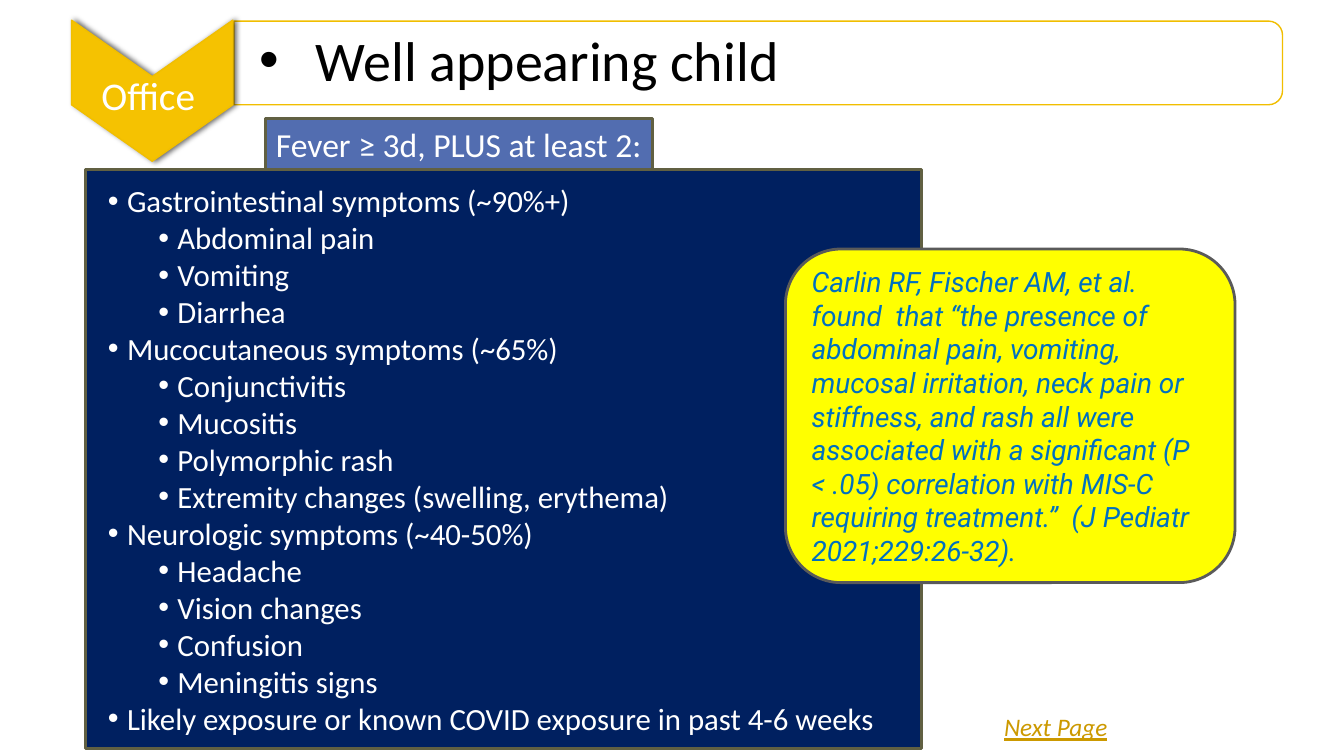
import pptx
import pptx.util
import pptx.dml.color
import pptx.enum.shapes
import pptx.enum.text
import pptx.oxml
from pptx.oxml.ns import nsdecls, qn
from lxml import etree

Inches, Pt = pptx.util.Inches, pptx.util.Pt
RGBColor = pptx.dml.color.RGBColor
SHAPE = pptx.enum.shapes.MSO_SHAPE
ANCHOR = pptx.enum.text.MSO_ANCHOR
ALIGN = pptx.enum.text.PP_ALIGN
FIT = pptx.enum.text.MSO_AUTO_SIZE

WHITE = RGBColor(0xFF, 0xFF, 0xFF)
BLACK = RGBColor(0x00, 0x00, 0x00)
NAVY = RGBColor(0x00, 0x20, 0x60)
BLUE = RGBColor(0x52, 0x6D, 0xB0)
OLIVE = RGBColor(0x61, 0x60, 0x42)
GOLD = RGBColor(0xF5, 0xC2, 0x01)
AMBER = RGBColor(0xF1, 0xBE, 0x00)
OCHRE = RGBColor(0xCC, 0x99, 0x00)
YELLOW = RGBColor(0xFF, 0xFF, 0x00)
GREY = RGBColor(0x5A, 0x5A, 0x5A)
AZURE = RGBColor(0x00, 0x70, 0xC0)

SIGNS = [
    ("Gastrointestinal symptoms (~90%+)",
     ["Abdominal pain", "Vomiting", "Diarrhea"]),
    ("Mucocutaneous symptoms (~65%)",
     ["Conjunctivitis", "Mucositis", "Polymorphic rash",
      "Extremity changes (swelling, erythema)"]),
    ("Neurologic symptoms (~40-50%)",
     ["Headache", "Vision changes", "Confusion", "Meningitis signs"]),
    ("Likely exposure or known COVID exposure in past 4-6 weeks", []),
]
QUOTE = ("Carlin RF, Fischer AM, et al. found  that “the presence of abdominal "
         "pain, vomiting, mucosal irritation, neck pain or stiffness, and rash "
         "all were associated with a significant (P < .05) correlation with "
         "MIS-C requiring treatment.”  (J Pediatr 2021;229:26-32).")


class Page:
    """Holds the base style and the slide being built."""
    base = {"name": "Calibri", "bold": False}

    def __init__(self, slide):
        self.slide = slide
        self.shapes = slide.shapes

    def apply(self, item, values):
        for key, value in values.items():
            setattr(item, key, value)

    def place(self, shape, box):
        keys = ("left", "top", "width", "height")
        self.apply(shape, dict(zip(keys, map(Inches, box))))

    def paint(self, shape, fill, line, width=2):
        shape.fill.solid()
        shape.fill.fore_color.rgb = fill
        shape.line.color.rgb = line
        shape.line.width = Pt(width)

    def frame(self, shape, **values):
        self.apply(shape.text_frame,
                   {"word_wrap": True, "auto_size": FIT.NONE, **values})

    def words(self, para, text, size, color, **font):
        run = para.add_run()
        run.text = text
        self.apply(run.font, {**self.base, "size": Pt(size), **font})
        run.font.color.rgb = color

    def bullet(self, para, left, hang):
        props = para._p.get_or_add_pPr()
        props.set("marL", str(Inches(left)))
        props.set("indent", str(-Inches(hang)))
        etree.SubElement(props, qn("a:buFont")).set("typeface", "Arial")
        etree.SubElement(props, qn("a:buChar")).set("char", "•")

    def block(self, kind, box, fill, line, width=2):
        shape = self.shapes.add_shape(kind, *map(Inches, box))
        shape.shadow.inherit = False
        self.paint(shape, fill, line, width)
        return shape

    def label(self, box, text, size, color, align=ALIGN.LEFT, **font):
        shape = self.shapes.add_textbox(*map(Inches, box))
        self.frame(shape)
        para = shape.text_frame.paragraphs[0]
        para.alignment = align
        self.words(para, text, size, color, **font)

    def card(self, kind, box, fill, line, text, size, color, align, **font):
        shape = self.block(kind, box, fill, line)
        self.frame(shape, vertical_anchor=ANCHOR.MIDDLE)
        para = shape.text_frame.paragraphs[0]
        para.alignment = align
        self.words(para, text, size, color, **font)

    def list(self, box, groups):
        body = self.slide.placeholders[1]
        self.place(body, box)
        self.paint(body, NAVY, OLIVE)
        self.frame(body, vertical_anchor=ANCHOR.MIDDLE,
                   margin_top=0, margin_bottom=0)
        rows = [(text, level) for head, subs in groups
                for text, level in [(head, 0)] + [(sub, 1) for sub in subs]]
        for n, (text, level) in enumerate(rows):
            paras = body.text_frame
            para = paras.add_paragraph() if n else paras.paragraphs[0]
            self.apply(para, {"level": level, "space_before": Pt(0),
                              "alignment": ALIGN.LEFT})
            self.bullet(para, 0.31 + 0.5 * level, 0.19)
            self.words(para, text, 22, WHITE)

    def head(self, box, text):
        left, top, width, height = box
        # Band: upright shape turned so its rounded end faces right
        turned = (left + (width - height) / 2, top + (height - width) / 2,
                  height, width)
        band = self.block(SHAPE.ROUND_2_SAME_RECTANGLE, turned, WHITE, AMBER, 1)
        band.rotation = 90
        title = self.shapes.title
        self.place(title, box)
        band.element.addnext(title.element)
        edge = Inches(0.06)
        self.frame(title, vertical_anchor=ANCHOR.MIDDLE, margin_left=Inches(0.19),
                   margin_top=edge, margin_right=edge, margin_bottom=edge)
        para = title.text_frame.paragraphs[0]
        self.apply(para, {"alignment": ALIGN.LEFT, "line_spacing": 0.9})
        self.bullet(para, 0.62, 0.56)
        self.words(para, text, 40, BLACK)

    def arrow(self, box, notch):
        left, top, width, height = box
        mid, right, low = left + width / 2, left + width, top + height
        points = [(right, low - notch), (mid, low), (left, low - notch),
                  (left, top), (mid, top + notch)]
        form = self.shapes.build_freeform(Inches(right), Inches(top), scale=1.0)
        form.add_line_segments([(Inches(x), Inches(y)) for x, y in points])
        shape = form.convert_to_shape()
        self.paint(shape, GOLD, AMBER, 1)
        shape.element.spPr.append(pptx.oxml.parse_xml(
            f'<a:effectLst {nsdecls("a")}>'
            f'<a:outerShdw blurRad="{Pt(4)}" dist="{Pt(2)}" dir="0">'
            '<a:srgbClr val="000000"><a:alpha val="60000"/></a:srgbClr>'
            '</a:outerShdw></a:effectLst>'))


def main():
    deck = pptx.Presentation()
    deck.slide_width, deck.slide_height = Inches(13.33), Inches(7.5)
    page = Page(deck.slides.add_slide(deck.slide_layouts[1]))

    # Criteria
    page.card(SHAPE.RECTANGLE, (2.63, 1.18, 3.84, 0.5), BLUE, OLIVE,
              "Fever ≥ 3d, PLUS at least 2:", 24, WHITE, ALIGN.CENTER)
    page.list((0.85, 1.68, 8.29, 5.75), SIGNS)
    page.label((9.86, 7.01, 1.67, 0.4), "Next Page", 18, OCHRE,
               italic=True, underline=True)

    # Heading
    page.head((2.32, 0.21, 10.4, 0.83), "Well appearing child")
    page.arrow((0.71, 0.2, 1.6, 1.4), 0.56)
    page.label((0.71, 0.66, 1.52, 0.57), "Office", 28, WHITE, ALIGN.CENTER)

    # Study quote
    page.card(SHAPE.ROUNDED_RECTANGLE, (7.79, 2.47, 4.46, 3.31), YELLOW, GREY,
              QUOTE, 20, AZURE, ALIGN.LEFT, name="Roboto", italic=True)

    deck.save("out.pptx")


if __name__ == "__main__":
    main()
